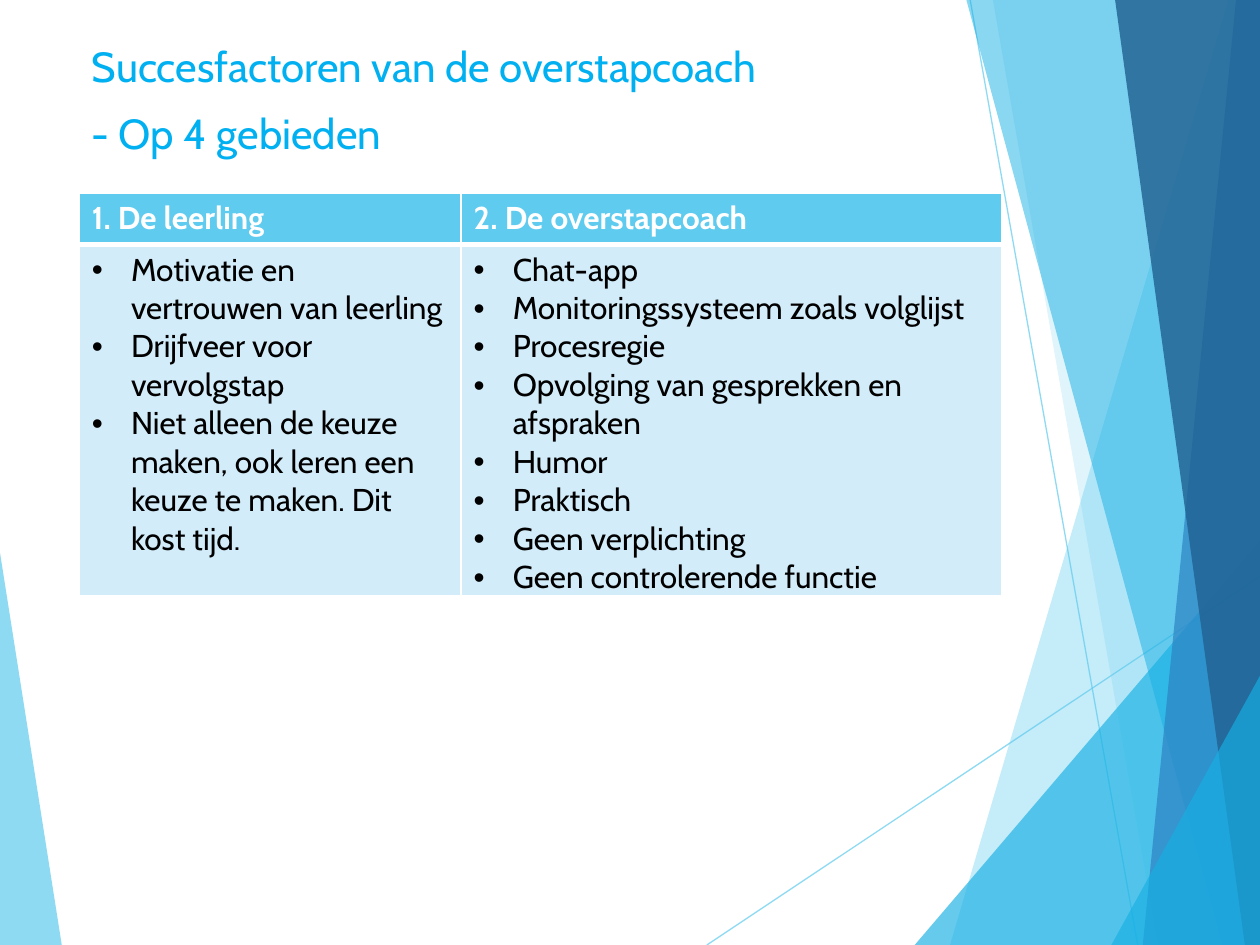
from dataclasses import dataclass

from lxml import etree
from pptx import Presentation
from pptx.dml.color import RGBColor
from pptx.enum.shapes import MSO_CONNECTOR
from pptx.oxml.ns import qn
from pptx.util import Emu, Inches, Pt

STRAIGHT = MSO_CONNECTOR.STRAIGHT
Point = tuple[float, float]  # percent of the slide's width and height


@dataclass(frozen=True)
class Theme:
    font: str = "Cabin"
    title: str = "00B0F0"
    sky: str = "5FCBEF"
    cyan: str = "17B0E4"
    blue: str = "2E83C3"
    navy: str = "226292"
    body_fill: str = "D2ECF9"
    white: str = "FFFFFF"
    black: str = "000000"
    title_size: int = 24
    table_size: int = 18


@dataclass(frozen=True)
class Facet:
    color: str
    opacity: int
    points: tuple[Point, ...]


@dataclass(frozen=True)
class Ray:
    start: Point
    end: Point


@dataclass(frozen=True)
class Column:
    heading: str
    width: float
    items: tuple[str, ...]


THEME = Theme()
WIDTH, HEIGHT = Inches(10), Inches(7.5)
LEFT, CONTENT_WIDTH = 6.3, 73.2
HEADER_HEIGHT, BODY_HEIGHT = 5.45, 37.2
INDENT = Inches(0.31)

LEFT_FACET = Facet(THEME.sky, 70, ((0, 58.5), (4.9, 100), (0, 100)))
RAYS = (Ray((56.1, 100), (100, 61)), Ray((77, 0), (90.3, 100)))
RIGHT_FACETS = (
    Facet(THEME.sky, 36, ((97.5, 0), (75.4, 100), (100, 100), (100, 0))),
    Facet(THEME.sky, 20, ((78.8, 0), (91.9, 100), (100, 100), (100, 0))),
    Facet(THEME.cyan, 66, ((72.6, 100), (100, 57.2), (100, 100))),
    Facet(THEME.cyan, 50, ((76.7, 0), (97, 100), (100, 100), (100, 0))),
    Facet(THEME.blue, 70, ((98.1, 0), (90.7, 100), (100, 100), (100, 0))),
    Facet(THEME.navy, 82, ((88.5, 0), (98.8, 100), (100, 100), (100, 0))),
    Facet(THEME.cyan, 66, ((88.2, 100), (100, 71.5), (100, 100))),
)
TITLE_LINES = ("Succesfactoren van de overstapcoach", "- Op 4 gebieden")
COLUMNS = (
    Column("1. De leerling", 30.3, (
        "Motivatie en vertrouwen van leerling",
        "Drijfveer voor vervolgstap",
        "Niet alleen de keuze maken, ook leren een keuze te maken. Dit kost tijd.",
    )),
    Column("2. De overstapcoach", 42.9, (
        "Chat-app",
        "Monitoringssysteem zoals volglijst",
        "Procesregie",
        "Opvolging van gesprekken en afspraken",
        "Humor",
        "Praktisch",
        "Geen verplichting",
        "Geen controlerende functie",
    )),
)


def across(share: float) -> Emu:
    return Emu(round(WIDTH * share / 100))


def down(share: float) -> Emu:
    return Emu(round(HEIGHT * share / 100))


def place(point: Point) -> tuple[Emu, Emu]:
    return across(point[0]), down(point[1])


def set_opacity(shape, opacity: int) -> None:
    for color in shape._element.spPr.iter(qn("a:srgbClr")):
        etree.SubElement(color, qn("a:alpha"), val=str(opacity * 1000))


def draw_facet(page, facet: Facet) -> None:
    first, *others = map(place, facet.points)
    builder = page.shapes.build_freeform(*first)
    builder.add_line_segments(others, close=True)
    shape = builder.convert_to_shape()
    shape.shadow.inherit = False
    shape.fill.solid()
    shape.fill.fore_color.rgb = RGBColor.from_string(facet.color)
    shape.line.fill.background()
    set_opacity(shape, facet.opacity)


def draw_ray(page, ray: Ray) -> None:
    line = page.shapes.add_connector(STRAIGHT, *place(ray.start), *place(ray.end))
    line.line.color.rgb = RGBColor.from_string(THEME.sky)
    line.line.width = Pt(0.75)
    set_opacity(line, 70)
    etree.SubElement(line._element.spPr, qn("a:effectLst"))


def style_text(para, size: int, color: str, bold: bool = False) -> None:
    para.font.name = THEME.font
    para.font.size = Pt(size)
    para.font.bold = bold
    para.font.color.rgb = RGBColor.from_string(color)


def draw_title(page) -> None:
    box = page.shapes.add_textbox(
        across(LEFT), down(3.3), across(CONTENT_WIDTH), down(13.9))
    frame = box.text_frame
    frame.word_wrap = True
    frame.text = "\n".join(TITLE_LINES)
    for para in frame.paragraphs:
        para.line_spacing = 1.06
        para.space_after = Pt(8)
        style_text(para, THEME.title_size, THEME.title)


def add_bullet(para) -> None:
    properties = para._p.get_or_add_pPr()
    properties.set("marL", str(INDENT))
    properties.set("indent", str(-INDENT))
    etree.SubElement(properties, qn("a:buFont"), typeface="Arial")
    etree.SubElement(properties, qn("a:buChar"), char="•")


def set_borders(cell, **points: int) -> None:
    properties = cell._tc.get_or_add_tcPr()
    for side in "LRTB":
        width = Pt(points.get(side, 1))
        line = etree.SubElement(properties, qn(f"a:ln{side}"), w=str(width))
        fill = etree.SubElement(line, qn("a:solidFill"))
        etree.SubElement(fill, qn("a:srgbClr"), val=THEME.white)


def fill_cell(cell, text: str, fill: str, color: str, bold: bool = False) -> None:
    cell.fill.solid()
    cell.fill.fore_color.rgb = RGBColor.from_string(fill)
    cell.text = text
    for para in cell.text_frame.paragraphs:
        style_text(para, THEME.table_size, color, bold)


def draw_table(page) -> None:
    table = page.shapes.add_table(
        2, len(COLUMNS), across(LEFT), down(20.4),
        across(CONTENT_WIDTH), down(HEADER_HEIGHT + BODY_HEIGHT)).table
    table.rows[0].height = down(HEADER_HEIGHT)
    table.rows[1].height = down(BODY_HEIGHT)
    for index, column in enumerate(COLUMNS):
        table.columns[index].width = across(column.width)
        header, body = table.cell(0, index), table.cell(1, index)
        set_borders(header, B=3)
        set_borders(body, T=3)
        fill_cell(header, column.heading, THEME.sky, THEME.white, bold=True)
        fill_cell(body, "\n".join(column.items), THEME.body_fill, THEME.black)
        body.margin_bottom = 0
        for para in body.text_frame.paragraphs:
            add_bullet(para)


def main() -> None:
    deck = Presentation()
    deck.slide_width, deck.slide_height = WIDTH, HEIGHT
    page = deck.slides.add_slide(deck.slide_layouts[6])

    # Backdrop of translucent facets and thin rays
    draw_facet(page, LEFT_FACET)
    for ray in RAYS:
        draw_ray(page, ray)
    for facet in RIGHT_FACETS:
        draw_facet(page, facet)

    # Content
    draw_title(page)
    draw_table(page)
    deck.save("out.pptx")


if __name__ == "__main__":
    main()
